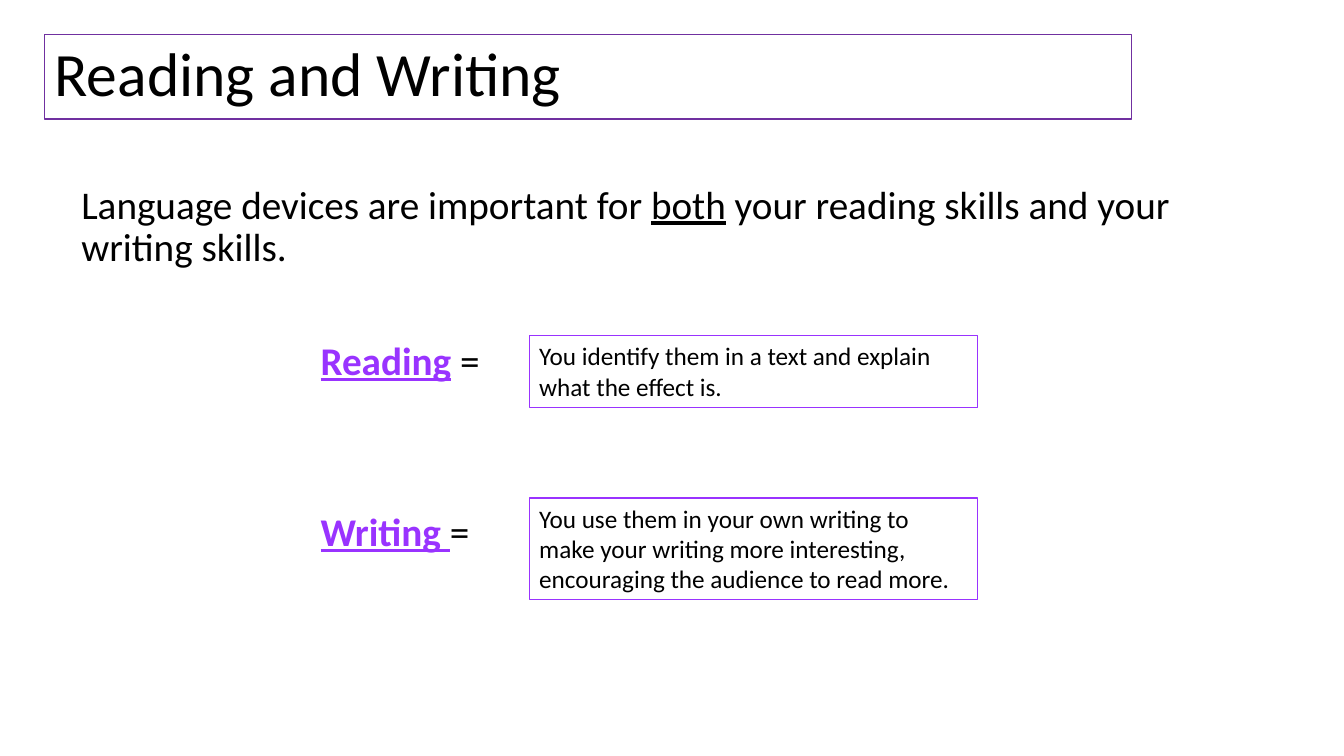
from pptx import Presentation
from pptx.dml.color import RGBColor
from pptx.enum import shapes, text
from pptx.util import Cm, Pt

BLACK = RGBColor(0x00, 0x00, 0x00)
VIOLET = RGBColor(0x99, 0x33, 0xFF)
PURPLE = RGBColor(0x70, 0x30, 0xA0)


def add_text(paragraph, words, size=28, color=BLACK, bold=False, underline=False):
    run = paragraph.add_run()
    run.text = words
    run.font.name = "Calibri"
    run.font.size = Pt(size)
    run.font.color.rgb = color
    run.font.bold = bold
    run.font.underline = underline


presentation = Presentation()
presentation.slide_width = Cm(33.87)
presentation.slide_height = Cm(19.05)
slide = presentation.slides.add_slide(presentation.slide_layouts[5])

title = slide.shapes.title
title.left, title.top, title.width, title.height = Cm(1.12), Cm(0.86), Cm(27.4), Cm(2.14)
title.line.color.rgb = PURPLE
title.line.width = Pt(0.75)
title.text_frame.auto_size = text.MSO_AUTO_SIZE.NONE
title.text_frame.vertical_anchor = text.MSO_ANCHOR.MIDDLE
paragraph = title.text_frame.paragraphs[0]
paragraph.alignment = text.PP_ALIGN.LEFT
paragraph.line_spacing = 0.9
add_text(paragraph, "Reading and Writing", size=44)

body = slide.shapes.add_textbox(Cm(1.8), Cm(4.55), Cm(29.2), Cm(12.1))
body.text_frame.word_wrap = True
paragraph = body.text_frame.paragraphs[0]
paragraph.line_spacing = 0.9
add_text(paragraph, "Language devices are important for ")
add_text(paragraph, "both", underline=True)
add_text(paragraph, " your reading skills and your writing skills.")

skills = [
    ("Reading", " =", 51, 8.46, 1.8,
     "You identify them in a text and explain what the effect is."),
    ("Writing ", "=", 92, 12.55, 2.57,
     "You use them in your own writing to make your writing more interesting, "
     "encouraging the audience to read more."),
]
for skill, equals, gap, top, height, explanation in skills:
    paragraph = body.text_frame.add_paragraph()
    paragraph.line_spacing = 0.9
    paragraph.space_before = Pt(gap)
    paragraph._p.get_or_add_pPr().set("marL", str(Cm(6.03)))
    add_text(paragraph, skill, color=VIOLET, bold=True, underline=True)
    add_text(paragraph, equals)

    box = slide.shapes.add_shape(
        shapes.MSO_SHAPE.RECTANGLE, Cm(13.34), Cm(top), Cm(11.3), Cm(height))
    box.shadow.inherit = False
    box.fill.background()
    box.line.color.rgb = VIOLET
    box.line.width = Pt(0.75)
    box.text_frame.word_wrap = True
    box.text_frame.auto_size = text.MSO_AUTO_SIZE.SHAPE_TO_FIT_TEXT
    box.text_frame.vertical_anchor = text.MSO_ANCHOR.TOP
    box.text_frame.paragraphs[0].alignment = text.PP_ALIGN.LEFT
    add_text(box.text_frame.paragraphs[0], explanation, size=18)

presentation.save("out.pptx")
